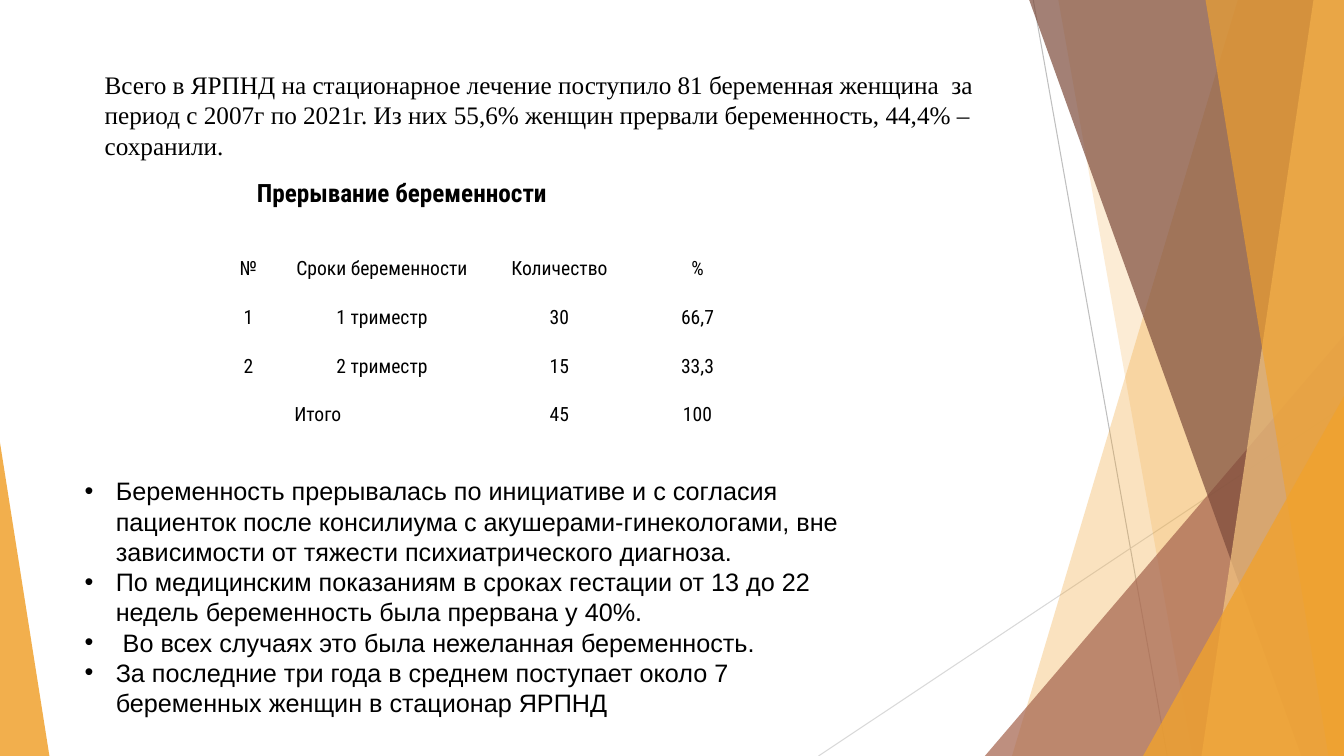
from collections import namedtuple

from lxml.etree import SubElement
from pptx import Presentation
from pptx.dml.color import RGBColor
from pptx.enum.shapes import MSO_CONNECTOR as Connector, MSO_SHAPE as Preset
from pptx.enum.text import MSO_ANCHOR as Anchor, PP_ALIGN as Align
from pptx.oxml.ns import qn
from pptx.util import Inches, Pt

WIDTH, HEIGHT = Inches(13.333), Inches(7.5)
COLORS = {
    "text": "000000",
    "orange": "F0A22E",
    "pale_orange": "F6C782",
    "brown": "A5644E",
    "dark_brown": "7C4B3B",
    "gray": "BFBFBF",
    "light_gray": "D9D9D9",
}
SERIF, SANS, CONDENSED = "Times New Roman", "Arial", "Roboto Condensed"

INTRO = ("Всего в ЯРПНД на стационарное лечение поступило 81 беременная женщина  за "
         "период с 2007г по 2021г. Из них 55,6% женщин прервали беременность, "
         "44,4% – сохранили.")
HEADING = "Прерывание беременности"
ROWS = [
    ["№", "Сроки беременности", "Количество", "%"],
    ["1", "1 триместр", "30", "66,7"],
    ["2", "2 триместр", "15", "33,3"],
    ["Итого", None, "45", "100"],
]
FINDINGS = [
    "Беременность прерывалась по инициативе и с согласия  пациенток после консилиума "
    "с акушерами-гинекологами, вне зависимости от тяжести психиатрического диагноза.",
    "По медицинским показаниям в сроках гестации от 13 до 22 недель беременность "
    "была прервана у 40%.",
    " Во всех случаях это была нежеланная беременность.",
    "За последние три года в среднем поступает около 7 беременных женщин "
    "в стационар ЯРПНД",
]

Box = namedtuple("Box", "left top width height")


def across(percent):
    return round(WIDTH * percent / 100)


def down(percent):
    return round(HEIGHT * percent / 100)


def area(left, top, width, height):
    """Box given in percent of the slide's width and height."""
    return Box(across(left), down(top), across(width), down(height))


def paint(shape, color, opacity):
    shape.shadow.inherit = False
    shape.line.fill.background()
    shape.fill.solid()
    shape.fill.fore_color.rgb = RGBColor.from_string(COLORS[color])
    tint = shape.fill._xPr.find(qn("a:solidFill"))[0]
    SubElement(tint, qn("a:alpha"), val=str(opacity * 1000))


def add_run(paragraph, text, font, size, bold=False):
    run = paragraph.add_run()
    run.text = text
    run.font.name = font
    run.font.size = Pt(size)
    run.font.bold = bold
    run.font.color.rgb = RGBColor.from_string(COLORS["text"])


def add_thin_line(slide, start, end, color):
    line = slide.shapes.add_connector(
        Connector.STRAIGHT, across(start[0]), down(start[1]), across(end[0]), down(end[1]))
    line.line.color.rgb = RGBColor.from_string(COLORS[color])
    line.line.width = Pt(0.75)
    SubElement(line._element.spPr, qn("a:effectLst"))


def add_band(slide, top_x, bottom_x, color, opacity):
    """Full-height band from a slanted edge to the right side of the slide."""
    builder = slide.shapes.build_freeform(across(top_x), 0)
    builder.add_line_segments(
        [(WIDTH, 0), (WIDTH, HEIGHT), (across(bottom_x), HEIGHT)], close=True)
    paint(builder.convert_to_shape(), color, opacity)


def add_corner(slide, box, apex, color, opacity):
    triangle = slide.shapes.add_shape(Preset.ISOSCELES_TRIANGLE, *box)
    triangle.adjustments[0] = apex
    paint(triangle, color, opacity)


def add_backdrop(slide):
    add_thin_line(slide, (76.88, 0), (86.85, 100), "gray")
    add_thin_line(slide, (100, 53.73), (60.9, 100), "light_gray")
    add_band(slide, 92.1, 75.3, "orange", 30)
    add_band(slide, 78.75, 88.73, "orange", 20)
    add_corner(slide, area(73.28, 44.4, 26.72, 55.6), 1, "brown", 72)
    add_band(slide, 76.58, 96.83, "dark_brown", 70)
    add_band(slide, 97.73, 89.4, "pale_orange", 70)
    add_band(slide, 89.7, 98.85, "orange", 65)
    add_corner(slide, area(85.05, 52.4, 14.95, 47.6), 1, "orange", 80)
    add_corner(slide, area(0, 58.53, 3.68, 41.47), 0, "orange", 85)


def add_text(slide, box, texts, font, bold=False, bullets=False):
    frame = slide.shapes.add_textbox(*box).text_frame
    frame.word_wrap = True
    frame.vertical_anchor = Anchor.TOP
    for index, text in enumerate(texts):
        paragraph = frame.add_paragraph() if index else frame.paragraphs[0]
        add_run(paragraph, text, font, 18, bold)
        if bullets:
            properties = paragraph._p.get_or_add_pPr()
            properties.set("marL", str(Inches(0.31)))
            properties.set("indent", str(-Inches(0.31)))
            SubElement(properties, qn("a:buFont"), typeface=SANS)
            SubElement(properties, qn("a:buChar"), char="•")


def fill_cell(cell, text, is_total):
    cell.margin_left = cell.margin_right = Inches(0.07)
    cell.margin_top = cell.margin_bottom = 0
    paragraph = cell.text_frame.paragraphs[0]
    paragraph.line_spacing = 1.5
    paragraph.space_after = Pt(10)
    paragraph.alignment = Align.JUSTIFY if is_total else Align.CENTER
    if is_total:
        paragraph._p.get_or_add_pPr().set("indent", str(Inches(0.69)))
    add_run(paragraph, text, CONDENSED, 14)


def add_term_table(slide, box):
    table = slide.shapes.add_table(len(ROWS), len(ROWS[0]), *box).table
    table.first_row = table.horz_banding = False
    column_shares, row_shares = (61, 204, 148, 126), (48, 49, 48, 45)
    for column, share in zip(table.columns, column_shares):
        column.width = round(box.width * share / sum(column_shares))
    for row, share in zip(table.rows, row_shares):
        row.height = round(box.height * share / sum(row_shares))
    # The total label spans the first two columns
    last = len(ROWS) - 1
    table.cell(last, 0).merge(table.cell(last, 1))
    for r, texts in enumerate(ROWS):
        for c, text in enumerate(texts):
            cell = table.cell(r, c)
            cell.fill.background()
            if text is not None:
                fill_cell(cell, text, is_total=(r, c) == (last, 0))


def main():
    presentation = Presentation()
    presentation.slide_width, presentation.slide_height = WIDTH, HEIGHT
    slide = presentation.slides.add_slide(presentation.slide_layouts[6])
    add_backdrop(slide)
    add_text(slide, area(7.05, 8.53, 70.5, 19.2), [INTRO], SERIF)
    add_term_table(slide, area(16.2, 32.53, 40.43, 25.33))
    add_text(slide, area(5.55, 62.27, 60, 41.73), FINDINGS, SANS, bullets=True)
    add_text(slide, area(18.38, 22.8, 40.95, 5.33), [HEADING], CONDENSED, bold=True)
    presentation.save("out.pptx")


if __name__ == "__main__":
    main()
